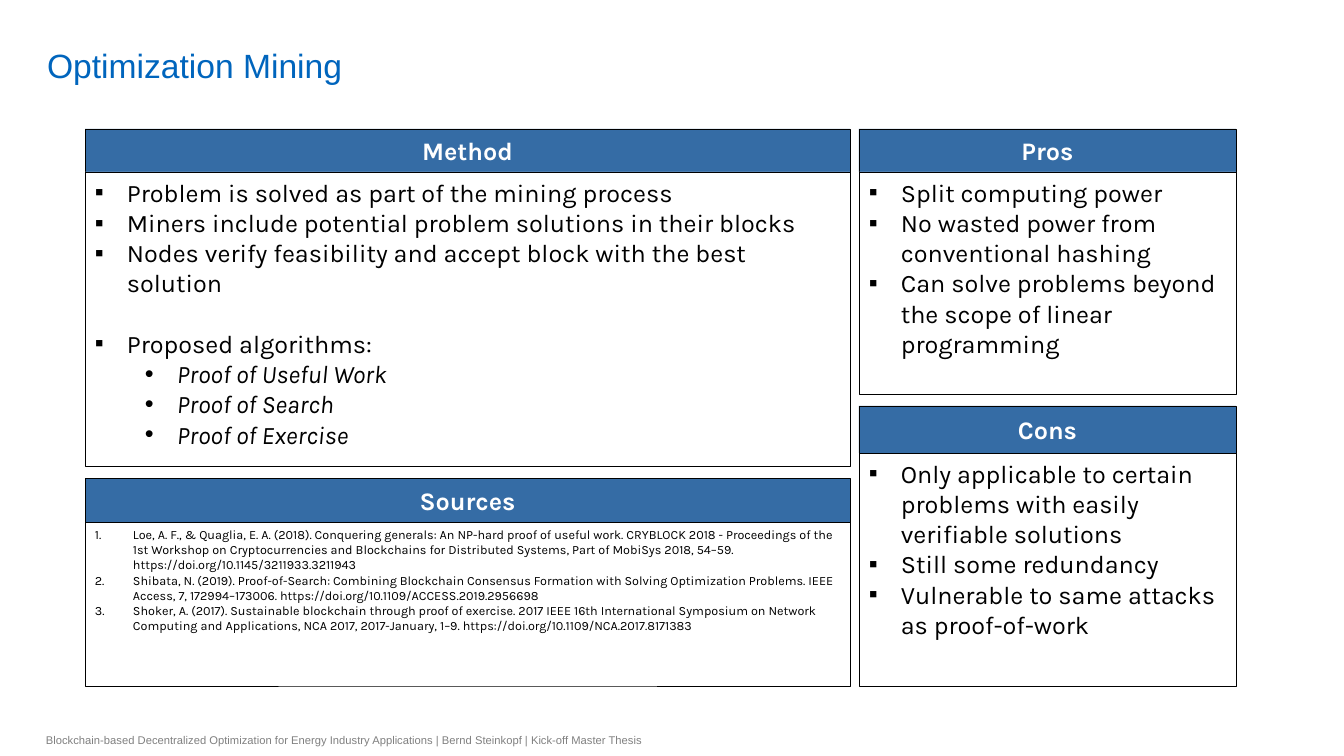
from dataclasses import dataclass

from lxml.etree import SubElement
from pptx import Presentation
from pptx.dml.color import RGBColor
from pptx.enum.shapes import MSO_SHAPE
from pptx.enum.text import MSO_ANCHOR, MSO_AUTO_SIZE, PP_ALIGN
from pptx.oxml.ns import qn
from pptx.util import Emu, Pt

TITLE = "Optimization Mining"
FOOTER = ("Blockchain-based Decentralized Optimization for Energy Industry Applications"
          " | Bernd Steinkopf | Kick-off Master Thesis")

# Each item: list style, text
METHOD = [
    ("square", "Problem is solved as part of the mining process"),
    ("square", "Miners include potential problem solutions in their blocks"),
    ("square", "Nodes verify feasibility and accept block with the best solution"),
    ("spaced", "Proposed algorithms:"),
    ("dot", "Proof of Useful Work"),
    ("dot", "Proof of Search"),
    ("dot", "Proof of Exercise"),
]
SOURCES = [
    ("number", "Loe, A. F., & Quaglia, E. A. (2018). Conquering generals: An NP-hard proof of "
     "useful work. CRYBLOCK 2018 - Proceedings of the 1st Workshop on Cryptocurrencies and "
     "Blockchains for Distributed Systems, Part of MobiSys 2018, 54–59. "
     "https://doi.org/10.1145/3211933.3211943"),
    ("number", "Shibata, N. (2019). Proof-of-Search: Combining Blockchain Consensus Formation "
     "with Solving Optimization Problems. IEEE Access, 7, 172994–173006. "
     "https://doi.org/10.1109/ACCESS.2019.2956698"),
    ("number", "Shoker, A. (2017). Sustainable blockchain through proof of exercise. 2017 IEEE "
     "16th International Symposium on Network Computing and Applications, NCA 2017, "
     "2017-January, 1–9. https://doi.org/10.1109/NCA.2017.8171383"),
]
PROS = [
    ("square", "Split computing power"),
    ("square", "No wasted power from conventional hashing"),
    ("square", "Can solve problems beyond the scope of linear programming"),
]
CONS = [
    ("square", "Only applicable to certain problems with easily verifiable solutions"),
    ("square", "Still some redundancy"),
    ("square", "Vulnerable to same attacks as proof-of-work"),
]


@dataclass(frozen=True)
class Theme:
    title: str = "0065BD"
    header: str = "356CA5"
    white: str = "FFFFFF"
    black: str = "000000"
    grey: str = "808080"
    plain_font: str = "Arial"
    panel_font: str = "Karla"
    title_size: int = 24
    panel_size: int = 18
    source_size: int = 9
    footer_size: int = 8
    line_width: float = 0.25


THEME = Theme()

# List style: bullet (None for numbers), text indent px, hanging px, space before pt, italic
LIST_STYLES = {
    "square": ("▪", 32, 32, 0, False),
    "spaced": ("▪", 32, 32, 21.6, False),
    "dot": ("•", 82, 32, 0, True),
    "number": (None, 38, 38, 0, False),
}

# Column: left, width, panels as (heading, heading height, full height, items, text size)
COLUMNS = [
    (85, 765, [("Method", 43, 337, METHOD, THEME.panel_size),
               ("Sources", 44, 208, SOURCES, THEME.source_size)]),
    (859, 377, [("Pros", 43, 265, PROS, THEME.panel_size),
                ("Cons", 47, 280, CONS, THEME.panel_size)]),
]
PANEL_TOP, PANEL_GAP = 129, 12
SLIDE_W, SLIDE_H = 1344, 756


def px(n):
    return Emu(round(n * 914400 / 100.8))


def rgb(color):
    return RGBColor.from_string(color)


def set_list_style(p, style):
    bullet, indent, hanging, before, _ = LIST_STYLES[style]
    pPr = p._p.get_or_add_pPr()
    pPr.set("marL", str(px(indent)))
    pPr.set("indent", str(-px(hanging)))
    if bullet:
        SubElement(pPr, qn("a:buFont")).set("typeface", THEME.plain_font)
        SubElement(pPr, qn("a:buChar")).set("char", bullet)
    else:
        SubElement(pPr, qn("a:buAutoNum")).set("type", "arabicPeriod")
    if before:
        p.space_before = Pt(before)


def write(tf, items, *, size, color, font=THEME.panel_font, bold=False,
          align=PP_ALIGN.LEFT, anchor=MSO_ANCHOR.MIDDLE):
    """Fill a text frame with (list style or None, text) items."""
    tf.word_wrap = True
    tf.auto_size = MSO_AUTO_SIZE.NONE
    tf.vertical_anchor = anchor
    for i, (style, text) in enumerate(items):
        p = tf.paragraphs[0] if i == 0 else tf.add_paragraph()
        p.alignment = align
        if style:
            set_list_style(p, style)
        r = p.add_run()
        r.text = text
        r.font.name, r.font.size, r.font.bold = font, Pt(size), bold
        r.font.italic = bool(style) and LIST_STYLES[style][-1]
        r.font.color.rgb = rgb(color)


def add_box(shapes, left, top, width, height, fill):
    sp = shapes.add_shape(MSO_SHAPE.RECTANGLE, px(left), px(top), px(width), px(height))
    sp.shadow.inherit = False
    sp.fill.solid()
    sp.fill.fore_color.rgb = rgb(fill)
    sp.line.color.rgb = rgb(THEME.black)
    sp.line.width = Pt(THEME.line_width)
    return sp.text_frame


def add_panel(s, left, top, width, panel):
    heading, head_h, height, items, size = panel
    shapes = s.shapes.add_group_shape().shapes
    tf = add_box(shapes, left, top, width, head_h, THEME.header)
    write(tf, [(None, heading)], size=THEME.panel_size, color=THEME.white, bold=True,
          align=PP_ALIGN.CENTER)
    tf = add_box(shapes, left, top + head_h, width, height - head_h, THEME.white)
    write(tf, items, size=size, color=THEME.black, anchor=MSO_ANCHOR.TOP)


def main():
    prs = Presentation()
    prs.slide_width, prs.slide_height = px(SLIDE_W), px(SLIDE_H)
    s = prs.slides.add_slide(prs.slide_layouts[5])

    title = s.shapes.title
    title.left, title.top, title.width, title.height = px(37), px(5), px(1167), px(80)
    tf = title.text_frame
    tf.margin_top = tf.margin_bottom = 0
    write(tf, [(None, TITLE)], size=THEME.title_size, color=THEME.title,
          font=THEME.plain_font, anchor=MSO_ANCHOR.BOTTOM)

    for left, width, panels in COLUMNS:
        top = PANEL_TOP
        for panel in panels:
            add_panel(s, left, top, width, panel)
            top += panel[2] + PANEL_GAP

    footer = s.shapes.add_textbox(px(36), px(724), px(635), px(32))
    write(footer.text_frame, [(None, FOOTER)], size=THEME.footer_size, color=THEME.grey,
          font=THEME.plain_font)
    prs.save("out.pptx")


if __name__ == "__main__":
    main()
